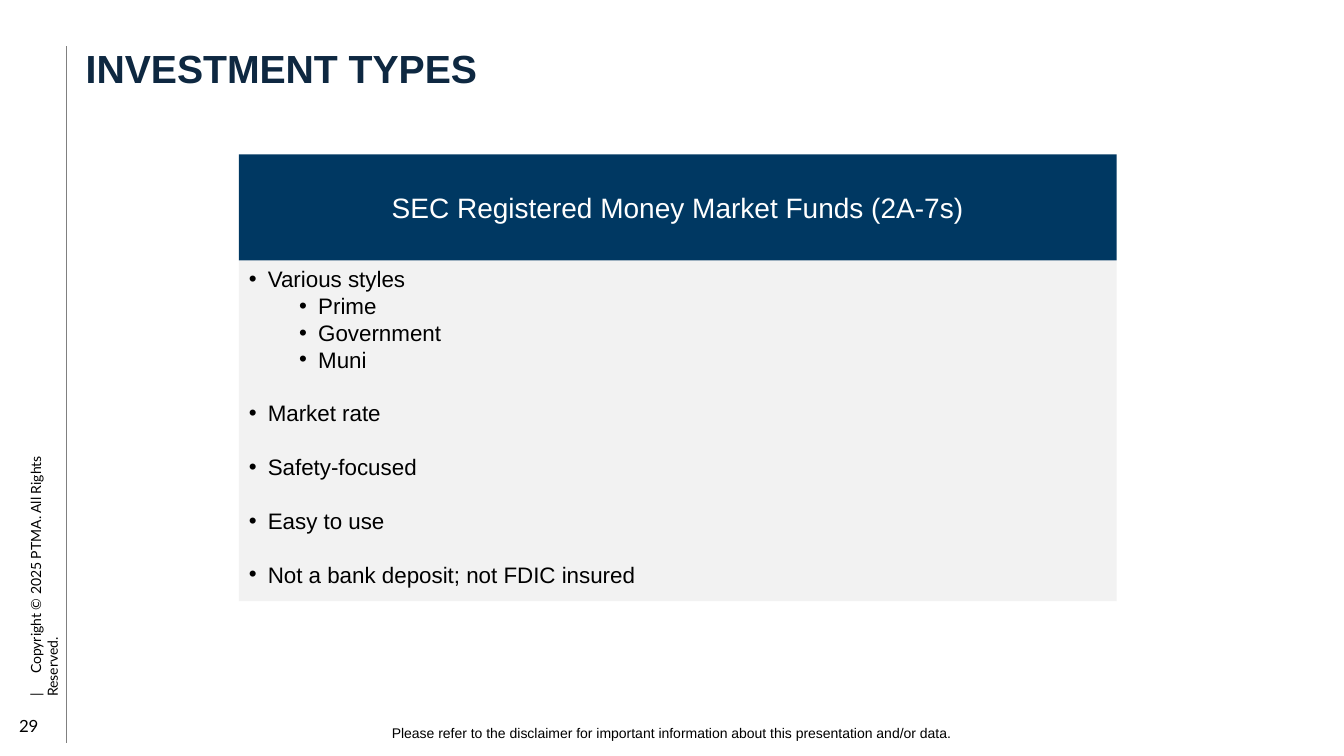
from lxml import etree
from pptx import Presentation
from pptx.dml.color import RGBColor
from pptx.enum import shapes, text
from pptx.oxml.ns import qn
from pptx.util import Cm, Pt

TITLE = "INVESTMENT TYPES"
HEAD = "SEC Registered Money Market Funds (2A-7s)"
POINTS = [
    ("Various styles", ["Prime", "Government", "Muni"]),
    ("Market rate", []),
    ("Safety-focused", []),
    ("Easy to use", []),
    ("Not a bank deposit; not FDIC insured", []),
]
RIGHTS = "|\tCopyright © 2025 PTMA. All Rights Reserved."
PAGE = "29"
NOTE = "Please refer to the disclaimer for important information about this presentation and/or data."

COLORS = {"ink": "000000", "title": "0E2841", "head": "003862",
          "body": "F2F2F2", "white": "FFFFFF", "rule": "808080"}
LEFT, WIDTH = 6.02, 22.12
HEAD_TOP, HEAD_HIGH, BODY_HIGH = 3.89, 2.67, 8.59
HANG, STEP = 0.48, 1.27
LINE = Pt(19.2)


def rgb(name):
    return RGBColor.from_string(COLORS[name])


def style(para, size, color="ink", face="Arial", bold=False):
    for run in para.runs:
        font = run.font
        font.size, font.name, font.bold = Pt(size), face, bold
        font.color.rgb = rgb(color)


def label(words, box, size, align=text.PP_ALIGN.LEFT, **look):
    shape = slide.shapes.add_textbox(*map(Cm, box))
    frame = shape.text_frame
    frame.word_wrap = True
    frame.text = words
    para = frame.paragraphs[0]
    para.alignment = align
    style(para, size, **look)
    return shape


def panel(top, high, color, anchor):
    shape = slide.shapes.add_shape(shapes.MSO_SHAPE.RECTANGLE,
                                   *map(Cm, (LEFT, top, WIDTH, high)))
    shape.shadow.inherit = False
    shape.fill.solid()
    shape.fill.fore_color.rgb = rgb(color)
    shape.line.fill.background()
    frame = shape.text_frame
    frame.word_wrap = True
    frame.vertical_anchor = anchor
    return frame


def bullet(para, level):
    props = para._p.get_or_add_pPr()
    props.set("marL", str(Cm(HANG + STEP * level)))
    props.set("indent", str(-Cm(HANG)))
    etree.SubElement(props, qn("a:buFont")).set("typeface", "Arial")
    etree.SubElement(props, qn("a:buChar")).set("char", "•")


deck = Presentation()
deck.slide_width, deck.slide_height = Cm(33.87), Cm(19.05)
slide = deck.slides.add_slide(deck.slide_layouts[6])

rule = slide.shapes.add_connector(shapes.MSO_CONNECTOR.STRAIGHT,
                                  *map(Cm, (1.68, 1.17, 1.68, 18.72)))
rule.line.color.rgb = rgb("rule")
rule.line.width = Pt(0.75)
etree.SubElement(rule._element.spPr, qn("a:effectLst"))

rights = label(RIGHTS, (-3.02, 13.54, 7.85, 0.69), 10, face="Lato")
rights.rotation = 270
tabs = etree.SubElement(rights.text_frame.paragraphs[0]._p.get_or_add_pPr(), qn("a:tabLst"))
etree.SubElement(tabs, qn("a:tab"), pos=str(Cm(0.58)), algn="l")

body = panel(HEAD_TOP + HEAD_HIGH, BODY_HIGH, "body", text.MSO_ANCHOR.TOP)
rows = [(level, words) for point, subs in POINTS
        for level, words in [(0, point)] + [(1, sub) for sub in subs]]
body.text = "\n".join(words for _, words in rows)
for spot, (para, (level, _)) in enumerate(zip(body.paragraphs, rows)):
    para.level = level
    para.alignment = text.PP_ALIGN.LEFT
    bullet(para, level)
    para.line_spacing = LINE
    if spot and level == 0:
        para.space_before = LINE
    style(para, 16)

head = panel(HEAD_TOP, HEAD_HIGH, "head", text.MSO_ANCHOR.MIDDLE)
head.text = HEAD
head.paragraphs[0].alignment = text.PP_ALIGN.CENTER
style(head.paragraphs[0], 20, "white")

title = label(TITLE, (2.16, 1.24, 30.86, 2.01), 28, color="title", bold=True).text_frame
title.margin_left = title.margin_right = title.margin_top = title.margin_bottom = 0
title.paragraphs[0].line_spacing = 0.9

page = label(PAGE, (0.15, 17.78, 1.07, 1.02), 12, text.PP_ALIGN.RIGHT, face="Lato")
page.text_frame.vertical_anchor = text.MSO_ANCHOR.MIDDLE
label(NOTE, (7.77, 18.14, 18.29, 0.69), 10, text.PP_ALIGN.CENTER)

deck.save("out.pptx")
